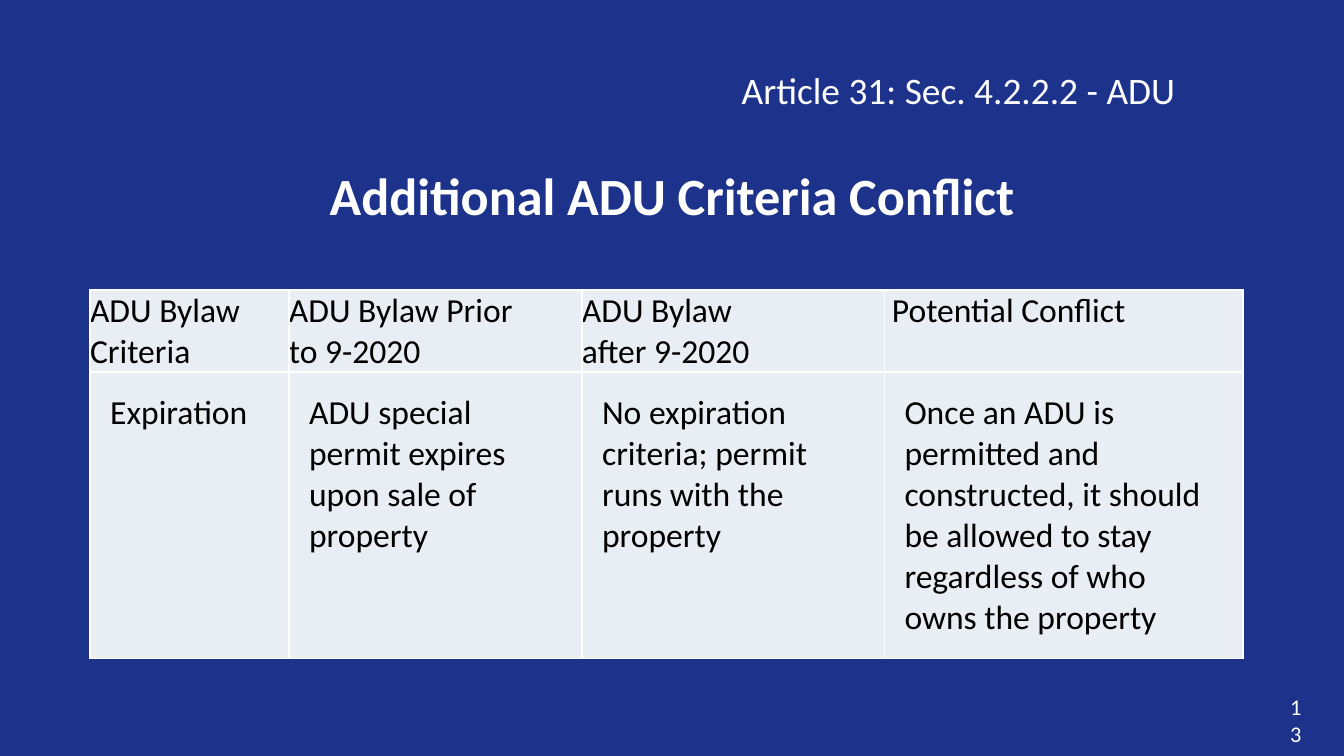
from dataclasses import dataclass

from lxml.etree import SubElement
from pptx import Presentation
from pptx.dml.color import RGBColor
from pptx.enum.text import MSO_ANCHOR, PP_ALIGN
from pptx.oxml.ns import qn
from pptx.util import Inches, Pt

FONT = "Calibri"
NAVY = "1D328B"
WHITE = "FFFFFF"
BLACK = "000000"
PALE = "E9EDF4"


@dataclass
class Label:
    lines: list[str]
    size: float
    color: str = WHITE
    bold: bool = False
    align: PP_ALIGN = PP_ALIGN.LEFT
    anchor: MSO_ANCHOR = MSO_ANCHOR.TOP


@dataclass
class Entry:
    lines: list[str]
    inset: float


def rgb(color: str) -> RGBColor:
    return RGBColor.from_string(color)


def write(frame, label: Label) -> None:
    frame.word_wrap = True
    frame.vertical_anchor = label.anchor
    for index, line in enumerate(label.lines):
        paragraph = frame.add_paragraph() if index else frame.paragraphs[0]
        paragraph.alignment = label.align
        run = paragraph.add_run()
        run.text = line
        run.font.name = FONT
        run.font.size = Pt(label.size)
        run.font.bold = label.bold
        run.font.color.rgb = rgb(label.color)


def place(shape, left: float, top: float, width: float, height: float) -> None:
    shape.left, shape.top = Inches(left), Inches(top)
    shape.width, shape.height = Inches(width), Inches(height)


def add_label(slide, box: tuple[float, float, float, float], label: Label) -> None:
    textbox = slide.shapes.add_textbox(*map(Inches, box))
    write(textbox.text_frame, label)


def add_borders(cell, color: str, width: float) -> None:
    properties = cell._tc.get_or_add_tcPr()
    for position, side in enumerate(("a:lnL", "a:lnR", "a:lnT", "a:lnB")):
        border = SubElement(properties, qn(side), w=str(Pt(width)))
        fill = SubElement(border, qn("a:solidFill"))
        SubElement(fill, qn("a:srgbClr"), val=color)
        properties.insert(position, border)


def fill_cell(cell, entry: Entry) -> None:
    cell.fill.solid()
    cell.fill.fore_color.rgb = rgb(PALE)
    cell.margin_left = cell.margin_right = Inches(entry.inset)
    cell.margin_top = cell.margin_bottom = Inches(entry.inset)
    write(cell.text_frame, Label(entry.lines, 18, BLACK))
    add_borders(cell, WHITE, 1)


def add_criteria_table(slide, left: float, top: float, widths: list[float],
                       heights: list[float], rows: list[list[Entry]]) -> None:
    table = slide.shapes.add_table(
        len(heights), len(widths), Inches(left), Inches(top),
        Inches(sum(widths)), Inches(sum(heights))).table
    table.first_row = table.horz_banding = False
    for column, width in zip(table.columns, widths):
        column.width = Inches(width)
    for row, height, entries in zip(table.rows, heights, rows):
        row.height = Inches(height)
        for cell, entry in zip(row.cells, entries):
            fill_cell(cell, entry)


def main() -> None:
    presentation = Presentation()
    presentation.slide_width = Inches(10)
    presentation.slide_height = Inches(10 * 9 / 16)
    slide = presentation.slides.add_slide(presentation.slide_layouts[5])
    slide.background.fill.solid()
    slide.background.fill.fore_color.rgb = rgb(NAVY)

    title = slide.shapes.title
    place(title, 0.5, 0.98, 9, 0.94)
    write(title.text_frame, Label(["Additional ADU Criteria Conflict"], 28, bold=True,
                                  align=PP_ALIGN.CENTER, anchor=MSO_ANCHOR.MIDDLE))

    add_label(slide, (9.5, 5.21, 0.25, 0.3),
              Label(["13"], 12, align=PP_ALIGN.RIGHT, anchor=MSO_ANCHOR.MIDDLE))

    headings = [Entry(lines, 0) for lines in (
        ["ADU Bylaw Criteria"],
        ["ADU Bylaw Prior", "to 9-2020"],
        ["ADU Bylaw", "after 9-2020"],
        [" Potential Conflict"],
    )]
    expiration = [Entry([text], 0.15) for text in (
        "Expiration",
        "ADU special permit expires upon sale of property",
        "No expiration criteria; permit runs with the property",
        "Once an ADU is permitted and constructed, it should be allowed "
        "to stay regardless of who owns the property",
    )]
    add_criteria_table(slide, 0.67, 2.16, [1.48, 2.18, 2.25, 2.67], [0.61, 2.13],
                       [headings, expiration])

    add_label(slide, (5.42, 0.45, 4.08, 0.44),
              Label(["Article 31: Sec. 4.2.2.2 - ADU"], 20))

    presentation.save("out.pptx")


if __name__ == "__main__":
    main()
